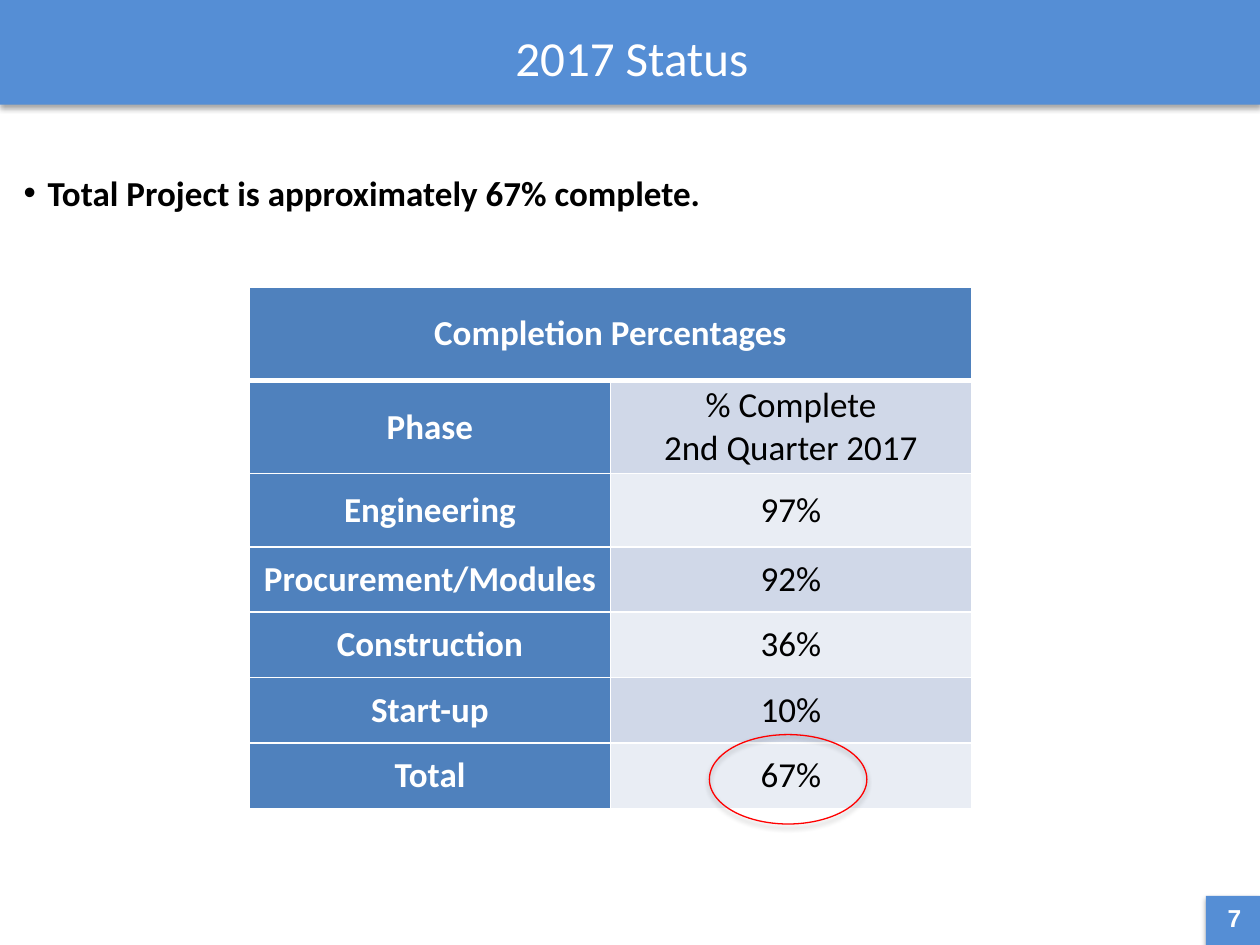
from dataclasses import dataclass

from lxml import etree
from pptx import Presentation
from pptx.dml.color import RGBColor
from pptx.enum.shapes import MSO_SHAPE
from pptx.enum.text import MSO_ANCHOR, PP_ALIGN
from pptx.oxml.ns import qn
from pptx.util import Inches, Pt

LEFT, CENTER, RIGHT = PP_ALIGN.LEFT, PP_ALIGN.CENTER, PP_ALIGN.RIGHT
TOP, MIDDLE = MSO_ANCHOR.TOP, MSO_ANCHOR.MIDDLE
RECTANGLE, OVAL = MSO_SHAPE.RECTANGLE, MSO_SHAPE.OVAL


@dataclass(frozen=True)
class Theme:
    banner: str = "558ED5"
    label: str = "4F81BD"
    bands: tuple = ("D0D8E8", "E9EDF4")
    light: str = "FFFFFF"
    dark: str = "000000"
    highlight: str = "FF0000"
    body_font: str = "Calibri"
    number_font: str = "Arial"
    title_size: int = 28
    body_size: int = 20
    number_size: int = 14


THEME = Theme()

TABLE_TITLE = "Completion Percentages"
PHASES = [
    ("Phase", "% Complete\n2nd Quarter 2017"),
    ("Engineering", "97%"),
    ("Procurement/Modules", "92%"),
    ("Construction", "36%"),
    ("Start-up", "10%"),
    ("Total", "67%"),
]
ROW_HEIGHTS = [0.74, 0.74, 0.58] + [0.52] * 4


def inches(box):
    return [Inches(length) for length in box]


def write(frame, wording, color, size=THEME.body_size, bold=False,
          align=CENTER, anchor=MIDDLE, font=THEME.body_font):
    """Fill a text frame, one paragraph for each line of the wording."""
    frame.text = wording
    frame.word_wrap = True
    frame.vertical_anchor = anchor
    formats = {"name": font, "size": Pt(size), "bold": bold}
    for paragraph in frame.paragraphs:
        paragraph.alignment = align
        for run in paragraph.runs:
            for key, value in formats.items():
                setattr(run.font, key, value)
            run.font.color.rgb = RGBColor.from_string(color)


def add_text(slide, box, wording, color, **formats):
    frame = slide.shapes.add_textbox(*inches(box)).text_frame
    write(frame, wording, color, **formats)
    return frame


def add_shadowed(slide, kind, box, fill=None, line=None):
    """Add a shape with a soft shadow straight below it."""
    shape = slide.shapes.add_shape(kind, *inches(box))
    if fill:
        shape.fill.solid()
        shape.fill.fore_color.rgb = RGBColor.from_string(fill)
    else:
        shape.fill.background()
    if line:
        shape.line.color.rgb = RGBColor.from_string(line)
        shape.line.width = Pt(0.75)
    else:
        shape.line.fill.background()
    shape.shadow.inherit = False
    effects = shape.element.spPr.find(qn("a:effectLst"))
    shadow = etree.SubElement(
        effects, qn("a:outerShdw"), blurRad=str(Pt(3.1)), dist=str(Pt(1.8)),
        dir="5400000", rotWithShape="0")
    color = etree.SubElement(shadow, qn("a:srgbClr"), val=THEME.dark)
    etree.SubElement(color, qn("a:alpha"), val="35000")


def add_banner(slide, box):
    left, top, width, height = box
    add_shadowed(slide, RECTANGLE, box, fill=THEME.banner)
    add_text(slide, (left, top + 0.16, width + 0.03, 0.6), "2017 Status",
             THEME.light, size=THEME.title_size)


def add_page_number(slide, box):
    left, top, width, height = box
    add_shadowed(slide, RECTANGLE, box, fill=THEME.banner)
    add_text(slide, (left - 0.24, top + 0.01, 0.62, 0.28), "7", THEME.light,
             size=THEME.number_size, bold=True, align=RIGHT, anchor=TOP,
             font=THEME.number_font)


def add_bullet(slide, box):
    frame = add_text(slide, box, "Total Project is approximately 67% complete.",
                     THEME.dark, bold=True, align=LEFT, anchor=TOP)
    properties = frame.paragraphs[0]._p.get_or_add_pPr()
    indent = Inches(0.19)
    properties.set("marL", str(indent))
    properties.set("indent", str(-indent))
    etree.SubElement(properties, qn("a:buFont"), typeface=THEME.number_font)
    etree.SubElement(properties, qn("a:buChar"), char="•")


def set_borders(cell, top=1, bottom=1):
    properties = cell._tc.get_or_add_tcPr()
    widths = {"a:lnL": 1, "a:lnR": 1, "a:lnT": top, "a:lnB": bottom}
    for position, (side, width) in enumerate(widths.items()):
        line = etree.Element(qn(side), w=str(Pt(width)))
        fill = etree.SubElement(line, qn("a:solidFill"))
        etree.SubElement(fill, qn("a:srgbClr"), val=THEME.light)
        properties.insert(position, line)


def style_cell(cell, wording, fill, color, bold):
    margins = {"margin_left": 0.07, "margin_right": 0.07,
               "margin_top": 0, "margin_bottom": 0}
    for side, length in margins.items():
        setattr(cell, side, Inches(length))
    write(cell.text_frame, wording, color, bold=bold)
    cell.vertical_anchor = MIDDLE
    cell.fill.solid()
    cell.fill.fore_color.rgb = RGBColor.from_string(fill)


def add_completion_table(slide, box):
    table = slide.shapes.add_table(len(PHASES) + 1, 2, *inches(box)).table
    for column in table.columns:
        column.width = Inches(box[2] / 2)
    for row, height in zip(table.rows, ROW_HEIGHTS):
        row.height = Inches(height)

    heading = table.cell(0, 0)
    heading.merge(table.cell(0, 1))
    style_cell(heading, TABLE_TITLE, THEME.label, THEME.light, True)
    for index, (phase, complete) in enumerate(PHASES):
        style_cell(table.cell(index + 1, 0), phase, THEME.label,
                   THEME.light, True)
        style_cell(table.cell(index + 1, 1), complete, THEME.bands[index % 2],
                   THEME.dark, False)

    for index, row in enumerate(table.rows):
        for cell in row.cells:
            set_borders(cell, top=3 if index == 1 else 1,
                        bottom=3 if index == 0 else 1)


def main():
    deck = Presentation()
    deck.slide_width, deck.slide_height = Inches(10), Inches(7.5)
    slide = deck.slides.add_slide(deck.slide_layouts[6])
    add_page_number(slide, (9.57, 7.11, 0.43, 0.39))
    add_banner(slide, (0, -0.01, 10, 0.84))
    add_bullet(slide, (0.09, 1.31, 9.86, 0.77))
    add_completion_table(slide, (1.98, 2.28, 5.73, sum(ROW_HEIGHTS)))
    add_shadowed(slide, OVAL, (5.63, 5.83, 1.25, 0.71), line=THEME.highlight)
    deck.save("out.pptx")


if __name__ == "__main__":
    main()
